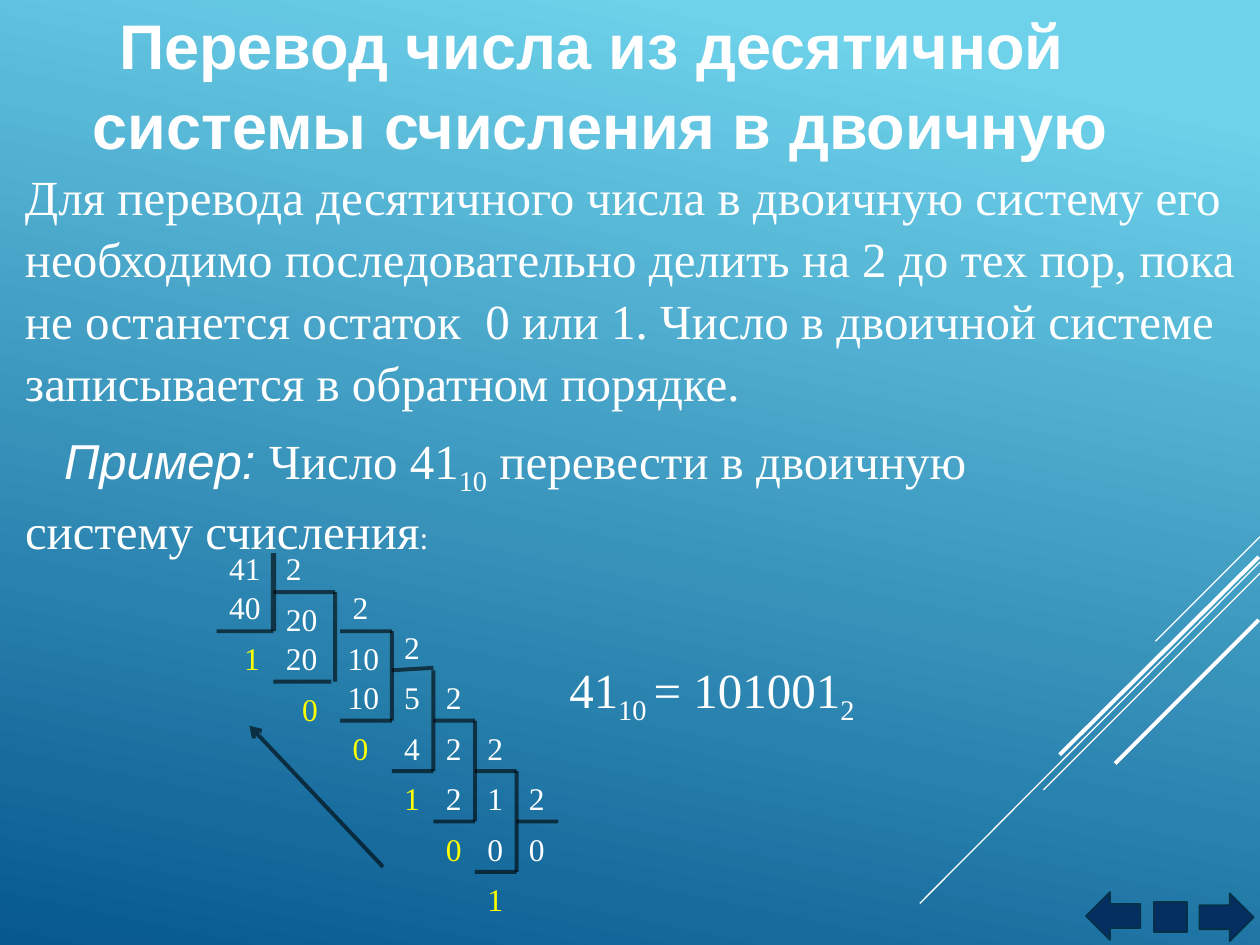
from lxml.etree import SubElement
from pptx import Presentation
from pptx.dml.color import RGBColor
from pptx.enum.shapes import MSO_CONNECTOR as CONN, MSO_SHAPE as SHAPE
from pptx.enum.text import MSO_ANCHOR as ANCHOR, MSO_AUTO_SIZE as AUTO, PP_ALIGN as ALIGN
from pptx.oxml.ns import qn
from pptx.util import Inches, Pt

COLORS = {"sky": "6ED2EB", "deep": "06588E", "white": "FFFFFF", "yellow": "FFFF00",
          "black": "000000", "navy": "052F61", "edge": "043148"}
SERIF = {"name": "Times New Roman", "size": Pt(28)}
ITALIC = {"name": "Arial", "size": Pt(28), "italic": True}
HEADING = {"name": "Arial", "size": Pt(36), "bold": True}
DIGIT = {"name": "Times New Roman", "size": Pt(18)}
SUB = {**SERIF, "sub": True}

STRIPES = [(10, 4.26, 9.17, 5.09, 0.75), (10, 4.46, 7.3, 7.17, 0.75),
           (10, 4.55, 8.28, 6.27, 0.75), (9.99, 4.42, 8.41, 5.99, 2.25),
           (9.99, 4.92, 8.85, 6.06, 2.25)]
FIRST_DIGITS = [("41", 1.72, 4.29), ("40", 1.72, 4.6), ("2", 2.17, 4.29),
                ("20", 2.17, 4.7), ("20", 2.17, 5.01), ("2", 2.7, 4.6),
                ("10", 2.66, 5.01), ("10", 2.66, 5.32)]
FIRST_REMAINDERS = [("1", 1.84, 5.01), ("0", 2.3, 5.41), ("0", 2.7, 5.72)]
FIRST_LINES = [(2.17, 5.01, 1.72, 5.01), (2.17, 4.7, 2.66, 4.7), (2.66, 4.7, 2.66, 5.41),
               (2.63, 5.41, 2.17, 5.41), (2.7, 5.01, 3.11, 5.01), (3.11, 5.01, 3.11, 5.72),
               (3.11, 5.72, 2.7, 5.72), (3.11, 5.32, 3.44, 5.3)]
LADDER = ["2541", "2220", "2101", "20"]
LADDER_X, LADDER_Y, STEP_X, STEP_Y = 3.11, 4.92, 0.33, 0.4


def rgb(name):
    return RGBColor.from_string(COLORS[name])


def fill_paragraph(p, runs, color="white", align=None, indent=0):
    p.line_spacing = 1.05
    p.alignment = align
    if indent:
        p._p.get_or_add_pPr().set("indent", str(Inches(indent)))
    for text, style in runs:
        r = p.add_run()
        r.text = text
        r.font.color.rgb = rgb(color)
        for key, value in style.items():
            if key == "sub":
                r._r.get_or_add_rPr().set("baseline", "-25000")
            else:
                setattr(r.font, key, value)


def add_text(s, box, paragraphs, color="white", wrap=True, anchor=ANCHOR.TOP):
    tf = s.shapes.add_textbox(*map(Inches, box)).text_frame
    tf.word_wrap = wrap
    tf.vertical_anchor = anchor
    for i, (runs, indent) in enumerate(paragraphs):
        p = tf.add_paragraph() if i else tf.paragraphs[0]
        fill_paragraph(p, runs, color, indent=indent)


def add_title(s, box, lines):
    sp = s.shapes.title
    sp.left, sp.top, sp.width, sp.height = map(Inches, box)
    tf = sp.text_frame
    tf.auto_size = AUTO.NONE
    tf.vertical_anchor = ANCHOR.MIDDLE
    for i, line in enumerate(lines):
        p = tf.add_paragraph() if i else tf.paragraphs[0]
        fill_paragraph(p, [(line, HEADING)], align=ALIGN.CENTER)


def add_line(s, x1, y1, x2, y2, width=2.25, color="black", alpha=60, arrow=False):
    c = s.shapes.add_connector(CONN.STRAIGHT, *map(Inches, (x1, y1, x2, y2)))
    c.line.width = Pt(width)
    c.line.color.rgb = rgb(color)
    ln = c.line._get_or_add_ln()
    if alpha < 100:
        SubElement(ln.find(".//" + qn("a:srgbClr")), qn("a:alpha"), val=str(alpha * 1000))
    if arrow:
        SubElement(ln, qn("a:tailEnd"), type="arrow")
    SubElement(c._element.spPr, qn("a:effectLst"))


def add_digit(s, text, x, y, color="white"):
    width = 0.33 if len(text) == 1 else 0.45
    add_text(s, (x, y, width, 0.4), [([(text, DIGIT)], 0)], color, wrap=False)


def add_button(s, kind, box):
    sp = s.shapes.add_shape(kind, *map(Inches, box))
    sp.shadow.inherit = False
    sp.fill.solid()
    sp.fill.fore_color.rgb = rgb("navy")
    sp.line.color.rgb = rgb("edge")
    sp.line.width = Pt(1)


def add_background(s):
    fill = s.background.fill
    fill.gradient()
    fill.gradient_angle = 258
    for stop, position, color in zip(fill.gradient_stops, (0.1, 1), ("sky", "deep")):
        stop.position = position
        stop.color.rgb = rgb(color)
    for *ends, width in STRIPES:
        add_line(s, *ends, width=width, color="white", alpha=100)


def add_division(s):
    add_line(s, 2.17, 4.39, 2.17, 5.01, width=3)
    for ends in FIRST_LINES:
        add_line(s, *ends)
    for digit in FIRST_DIGITS:
        add_digit(s, *digit)
    for digit in FIRST_REMAINDERS:
        add_digit(s, *digit, color="yellow")
    for i, column in enumerate(LADDER):
        x = LADDER_X + i * STEP_X
        y = LADDER_Y + i * STEP_Y
        for j, digit in enumerate(column):
            add_digit(s, digit, x, y + j * STEP_Y, "yellow" if j == 3 else "white")
        if len(column) == 4:
            right, top, bottom = x + STEP_X, y + STEP_Y, y + 3 * STEP_Y
            add_line(s, right, top, right, bottom)
            add_line(s, right, top + STEP_Y, right + STEP_X, top + STEP_Y)
            add_line(s, right, bottom, x, bottom)
    add_line(s, 3.04, 6.88, 1.98, 5.76, arrow=True)


def main():
    prs = Presentation()
    prs.slide_width, prs.slide_height = Inches(10), Inches(7.5)
    s = prs.slides.add_slide(prs.slide_layouts[5])
    add_background(s)
    add_title(s, (-0.32, 0, 10.17, 1.31),
              ["Перевод числа из десятичной ", "системы счисления в двоичную"])
    rule = ("Для перевода десятичного числа в двоичную систему его необходимо "
            "последовательно делить на 2 до тех пор, пока не останется остаток  0 или 1. "
            "Число в двоичной системе записывается в обратном порядке.")
    add_text(s, (0.1, 1.22, 9.9, 2.12), [([(rule, SERIF)], 0)], anchor=ANCHOR.MIDDLE)
    add_text(s, (0.1, 3.34, 9.35, 1.04), [
        ([("Пример: ", ITALIC), ("Число 41", SERIF), ("10", SUB),
          (" перевести в двоичную", SERIF)], 0.31),
        ([("систему счисления", SERIF), (":", DIGIT)], 0)])
    add_division(s)
    add_text(s, (4.42, 5.16, 3.68, 0.57), [
        ([("41", SERIF), ("10 ", SUB), ("= 101001", SERIF), ("2", SUB)], 0)])
    add_button(s, SHAPE.RIGHT_ARROW, (9.52, 7.09, 0.43, 0.38))
    add_button(s, SHAPE.LEFT_ARROW, (8.62, 7.08, 0.43, 0.38))
    add_button(s, SHAPE.RECTANGLE, (9.16, 7.16, 0.26, 0.24))
    prs.save("out.pptx")


if __name__ == "__main__":
    main()
